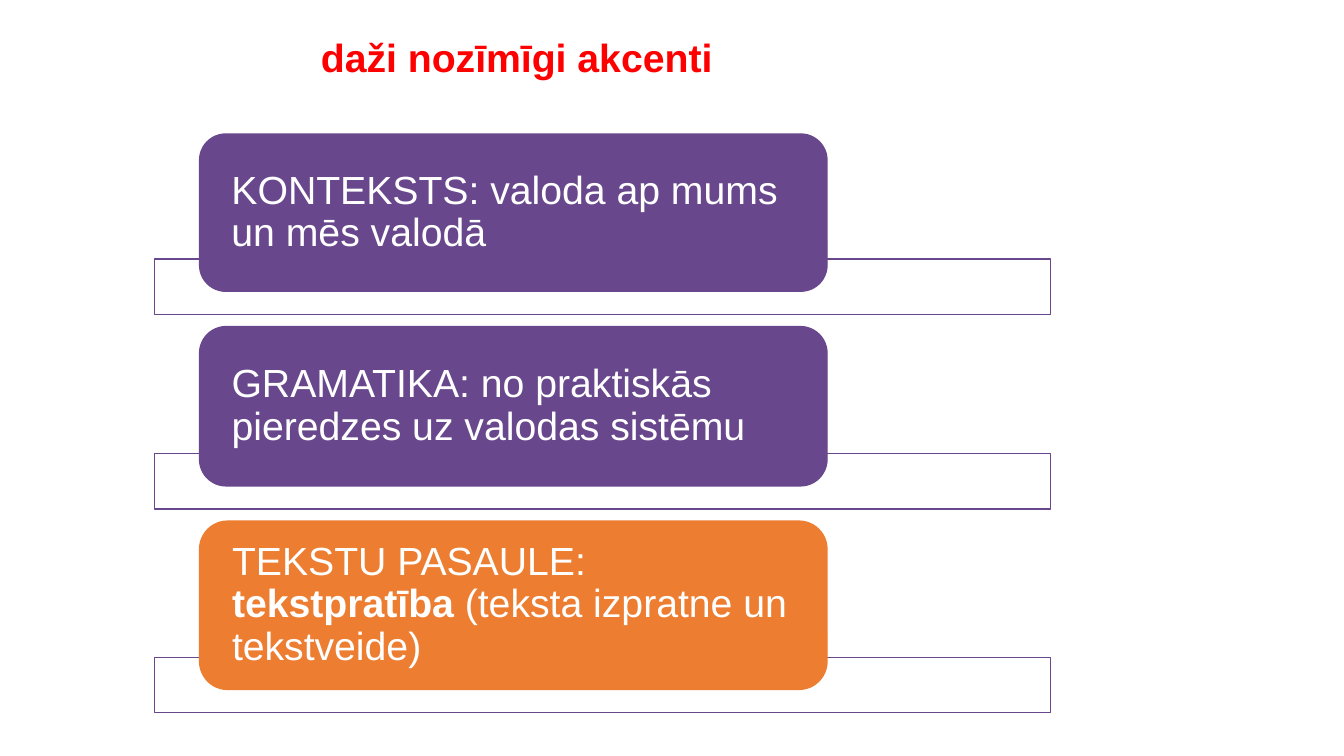
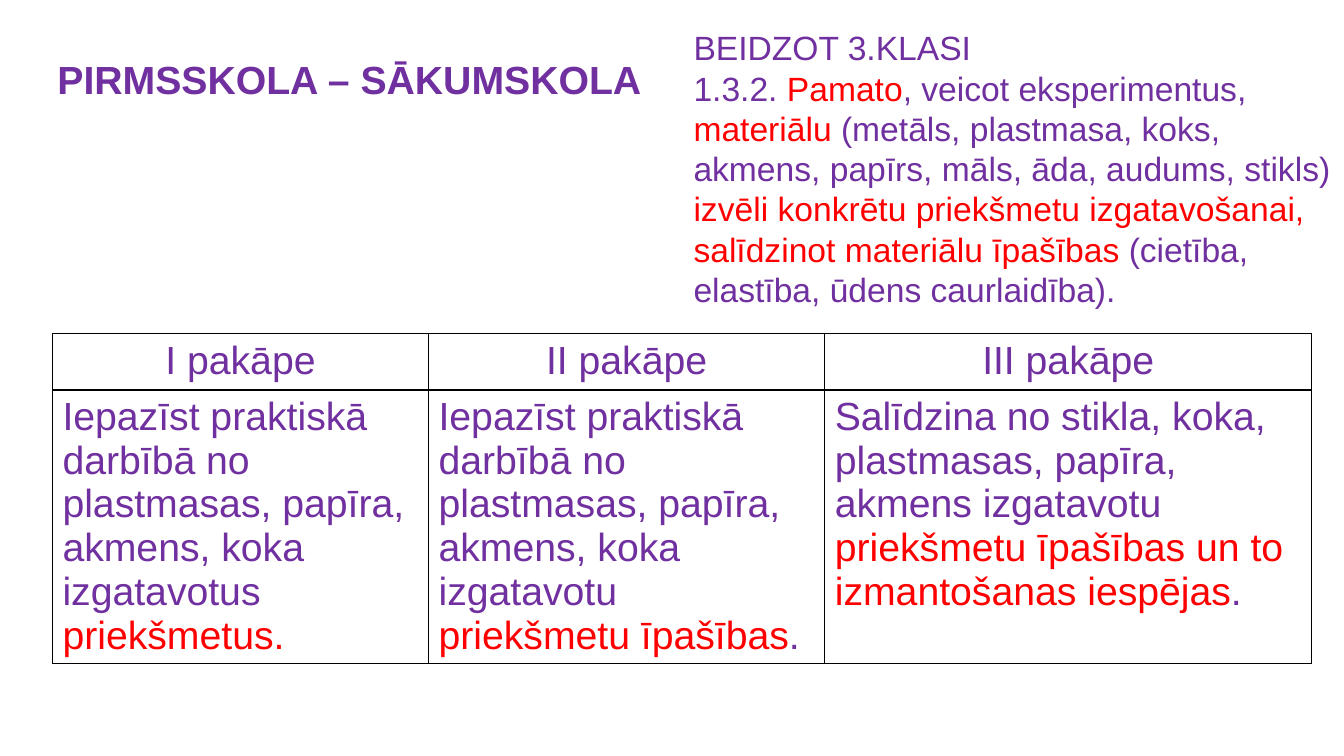
from dataclasses import dataclass

from lxml import etree
from pptx import Presentation
from pptx.dml.color import RGBColor
from pptx.enum.shapes import MSO_SHAPE
from pptx.enum.text import MSO_ANCHOR, MSO_AUTO_SIZE, PP_ALIGN
from pptx.oxml.ns import qn
from pptx.util import Inches, Pt

RECTANGLE, ROUNDED = MSO_SHAPE.RECTANGLE, MSO_SHAPE.ROUNDED_RECTANGLE
TOP, MIDDLE = MSO_ANCHOR.TOP, MSO_ANCHOR.MIDDLE
LEFT, CENTER = PP_ALIGN.LEFT, PP_ALIGN.CENTER
NO_AUTOFIT = MSO_AUTO_SIZE.NONE
TITLE_ONLY = 5


@dataclass(frozen=True)
class Theme:
    font: str = "Arial"
    large: int = 28
    medium: int = 24
    white: RGBColor = RGBColor.from_string("FFFFFF")
    black: RGBColor = RGBColor.from_string("000000")
    red: RGBColor = RGBColor.from_string("FF0000")
    purple: RGBColor = RGBColor.from_string("7030A0")
    violet: RGBColor = RGBColor.from_string("68478D")
    orange: RGBColor = RGBColor.from_string("ED7D31")


THEME = Theme()

ACCENTS = [
    (1.56, THEME.violet, [("KONTEKSTS: valoda ap mums un mēs valodā", False)]),
    (1.58, THEME.violet,
     [("GRAMATIKA: no praktiskās pieredzes uz valodas sistēmu", False)]),
    (1.67, THEME.orange,
     [("TEKSTU PASAULE: ", False), ("tekstpratība ", True),
      ("(teksta izpratne un tekstveide)", False)]),
]

OUTCOME = [
    [("BEIDZOT 3.KLASI", THEME.purple)],
    [("1.3.2. ", THEME.purple), ("Pamato", THEME.red),
     (", veicot eksperimentus, ", THEME.purple), ("materiālu", THEME.red),
     (" (metāls, plastmasa, koks, akmens, papīrs, māls, āda, audums, stikls) ",
      THEME.purple),
     ("izvēli konkrētu priekšmetu izgatavošanai, salīdzinot materiālu īpašības ",
      THEME.red),
     ("(cietība, elastība, ūdens caurlaidība).", THEME.purple)],
]

STAGES = [
    ("I pakāpe", 3.73, [
        [("Iepazīst praktiskā", THEME.purple)],
        [("darbībā no plastmasas, papīra, akmens, koka izgatavotus ", THEME.purple),
         ("priekšmetus.", THEME.red)]]),
    ("II pakāpe", 3.93, [
        [("Iepazīst praktiskā darbībā no plastmasas, papīra, akmens, koka izgatavotu ",
          THEME.purple),
         ("priekšmetu īpašības", THEME.red), (".", THEME.purple)]]),
    ("III pakāpe", 4.83, [
        [("Salīdzina no stikla, koka, plastmasas, papīra, akmens izgatavotu ",
          THEME.purple),
         ("priekšmetu īpašības un to izmantošanas iespējas", THEME.red),
         (".", THEME.purple)]]),
]


def add_run(paragraph, text, color, size=THEME.large, bold=False):
    run = paragraph.add_run()
    run.text = text
    run.font.name = THEME.font
    run.font.size = Pt(size)
    run.font.bold = bold
    run.font.color.rgb = color


def fill_text(frame, paragraphs, size=THEME.large, alignment=LEFT):
    for index, runs in enumerate(paragraphs):
        paragraph = frame.add_paragraph() if index else frame.paragraphs[0]
        paragraph.alignment = alignment
        for text, color in runs:
            add_run(paragraph, text, color, size)


def place(shape, left, top, width, height):
    shape.left, shape.top = Inches(left), Inches(top)
    shape.width, shape.height = Inches(width), Inches(height)


def add_titled_slide(presentation, text, color, alignment, box):
    slide = presentation.slides.add_slide(presentation.slide_layouts[TITLE_ONLY])
    title = slide.shapes.title
    place(title, *box)
    frame = title.text_frame
    frame.auto_size = NO_AUTOFIT
    frame.vertical_anchor = TOP
    paragraph = frame.paragraphs[0]
    paragraph.alignment = alignment
    add_run(paragraph, text, color, bold=True)
    return slide


def add_panel(slide, kind, box, fill, line):
    panel = slide.shapes.add_shape(kind, *(Inches(length) for length in box))
    panel.shadow.inherit = False
    panel.fill.solid()
    panel.fill.fore_color.rgb = fill
    panel.line.color.rgb = line
    panel.line.width = Pt(1)
    return panel


def add_accent_list(slide, left, top, width):
    bar_height, overlap, gap = 0.55, 0.32, 0.12
    card_left, card_width = left + 0.45, width * 0.7
    for height, color, runs in ACCENTS:
        bar_top = top + height - overlap
        add_panel(slide, RECTANGLE, (left, bar_top, width, bar_height),
                  THEME.white, THEME.violet)
        card = add_panel(slide, ROUNDED, (card_left, top, card_width, height),
                         color, color)
        frame = card.text_frame
        frame.word_wrap = True
        frame.vertical_anchor = MIDDLE
        frame.margin_left = frame.margin_right = Inches(0.24)
        frame.margin_top = frame.margin_bottom = 0
        paragraph = frame.paragraphs[0]
        paragraph.alignment = LEFT
        paragraph.line_spacing = 0.9
        for text, bold in runs:
            add_run(paragraph, text, THEME.white, bold=bold)
        top = bar_top + bar_height + gap


def add_outcome(slide, left, top, width, height):
    box = slide.shapes.add_textbox(Inches(left), Inches(top),
                                   Inches(width), Inches(height))
    box.text_frame.word_wrap = True
    fill_text(box.text_frame, OUTCOME, THEME.medium)


def format_cell(cell):
    properties = cell._tc.get_or_add_tcPr()
    for side in ("lnL", "lnR", "lnT", "lnB"):
        border = etree.SubElement(properties, qn(f"a:{side}"), w=str(Pt(1)))
        solid = etree.SubElement(border, qn("a:solidFill"))
        etree.SubElement(solid, qn("a:srgbClr"), val=str(THEME.black))
    cell.fill.solid()
    cell.fill.fore_color.rgb = THEME.white


def add_stage_table(slide, left, top, row_heights):
    width = sum(column_width for _, column_width, _ in STAGES)
    table = slide.shapes.add_table(
        len(row_heights), len(STAGES), Inches(left), Inches(top),
        Inches(width), Inches(sum(row_heights))).table
    table.horz_banding = False
    table.first_row = False
    for row, height in zip(table.rows, row_heights):
        row.height = Inches(height)
    for index, (heading, column_width, description) in enumerate(STAGES):
        table.columns[index].width = Inches(column_width)
        header, body = table.cell(0, index), table.cell(1, index)
        fill_text(header.text_frame, [[(heading, THEME.purple)]], alignment=CENTER)
        fill_text(body.text_frame, description)
        format_cell(header)
        format_cell(body)


def build_accents_slide(presentation):
    slide = add_titled_slide(presentation, "daži nozīmīgi akcenti", THEME.red,
                             CENTER, (1.03, 0.28, 8.19, 1.04))
    add_accent_list(slide, 1.53, 1.33, 8.89)


def build_stages_slide(presentation):
    slide = add_titled_slide(presentation, "PIRMSSKOLA – SĀKUMSKOLA", THEME.purple,
                             LEFT, (0.47, 0.5, 6.3, 0.57))
    add_stage_table(slide, 0.52, 3.31, (0.56, 2.71))
    add_outcome(slide, 6.78, 0.22, 6.55, 2.93)


def main():
    presentation = Presentation()
    presentation.slide_width = Inches(13.33)
    presentation.slide_height = Inches(7.5)
    build_accents_slide(presentation)
    build_stages_slide(presentation)
    presentation.save("out.pptx")


if __name__ == "__main__":
    main()
